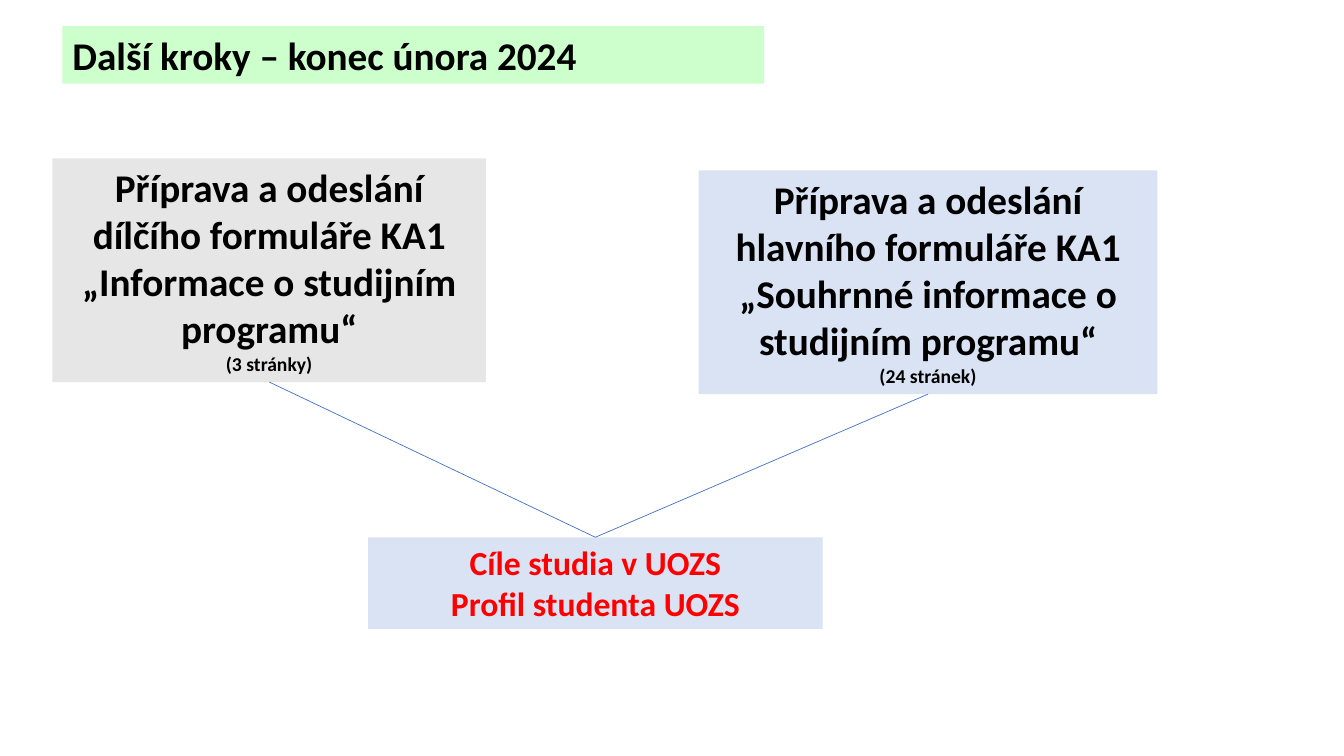
import pptx
import pptx.util
import pptx.dml.color
import pptx.enum.shapes
import pptx.enum.text
import pptx.oxml.ns
import lxml.etree

Inches = pptx.util.Inches
Align = pptx.enum.text.PP_ALIGN

COLORS = {
    "title": "CCFFCC",
    "grey": "E7E6E6",
    "blue": "DAE3F3",
    "text": "000000",
    "accent": "FF0000",
    "line": "4472C4",
}

# Boxes: left, top, width, height, fill, text colour, alignment, (text, size) lines
BOXES = {
    "title": (0.62, 0.26, 6.96, 0.57, "title", "text", Align.LEFT,
              [("Další kroky – konec února 2024", 28)]),
    "partial form": (0.52, 1.57, 4.3, 2.22, "grey", "text", Align.CENTER,
                     [("Příprava a odeslání dílčího formuláře KA1 "
                       "„Informace o studijním programu“", 28),
                      ("(3 stránky)", 14)]),
    "main form": (6.93, 1.69, 4.55, 2.22, "blue", "text", Align.CENTER,
                  [("Příprava a odeslání hlavního formuláře KA1 "
                    "„Souhrnné informace o studijním programu“", 28),
                   ("(24 stránek)", 14)]),
    "goals": (3.65, 5.33, 4.51, 0.91, "blue", "accent", Align.CENTER,
              [("Cíle studia v UOZS", 24), ("Profil studenta UOZS", 24)]),
}
LINKS = [("partial form", "goals"), ("main form", "goals")]


def rgb(name):
    return pptx.dml.color.RGBColor.from_string(COLORS[name])


def add_box(slide, box):
    left, top, width, height, fill, color, alignment, lines = box
    shape = slide.shapes.add_shape(
        pptx.enum.shapes.MSO_SHAPE.RECTANGLE,
        *map(Inches, (left, top, width, height)))
    shape.shadow.inherit = False
    shape.fill.solid()
    shape.fill.fore_color.rgb = rgb(fill)
    shape.line.fill.background()
    frame = shape.text_frame
    frame.word_wrap = True
    frame.vertical_anchor = pptx.enum.text.MSO_ANCHOR.TOP
    frame.auto_size = pptx.enum.text.MSO_AUTO_SIZE.SHAPE_TO_FIT_TEXT
    frame.text = "\n".join(text for text, size in lines)
    for paragraph, (text, size) in zip(frame.paragraphs, lines):
        paragraph.alignment = alignment
        font = paragraph.runs[0].font
        font.name = "Calibri"
        font.size = pptx.util.Pt(size)
        font.bold = True
        font.color.rgb = rgb(color)


def add_link(slide, upper, lower):
    # From the bottom centre of one box to the top centre of the other
    left, top, width, height = upper[:4]
    lower_left, lower_top, lower_width = lower[:3]
    ends = (left + width / 2, top + height,
            lower_left + lower_width / 2, lower_top)
    connector = slide.shapes.add_connector(
        pptx.enum.shapes.MSO_CONNECTOR.STRAIGHT, *map(Inches, ends))
    connector.line.color.rgb = rgb("line")
    connector.line.width = pptx.util.Pt(0.5)
    properties = connector.element.find(pptx.oxml.ns.qn("p:spPr"))
    lxml.etree.SubElement(properties, pptx.oxml.ns.qn("a:effectLst"))


def main():
    presentation = pptx.Presentation()
    presentation.slide_width = Inches(13.33)
    presentation.slide_height = Inches(7.5)
    slide = presentation.slides.add_slide(presentation.slide_layouts[6])

    # Text boxes
    for box in BOXES.values():
        add_box(slide, box)

    # Lines from both forms to the goals
    for upper, lower in LINKS:
        add_link(slide, BOXES[upper], BOXES[lower])

    presentation.save("out.pptx")


if __name__ == "__main__":
    main()
